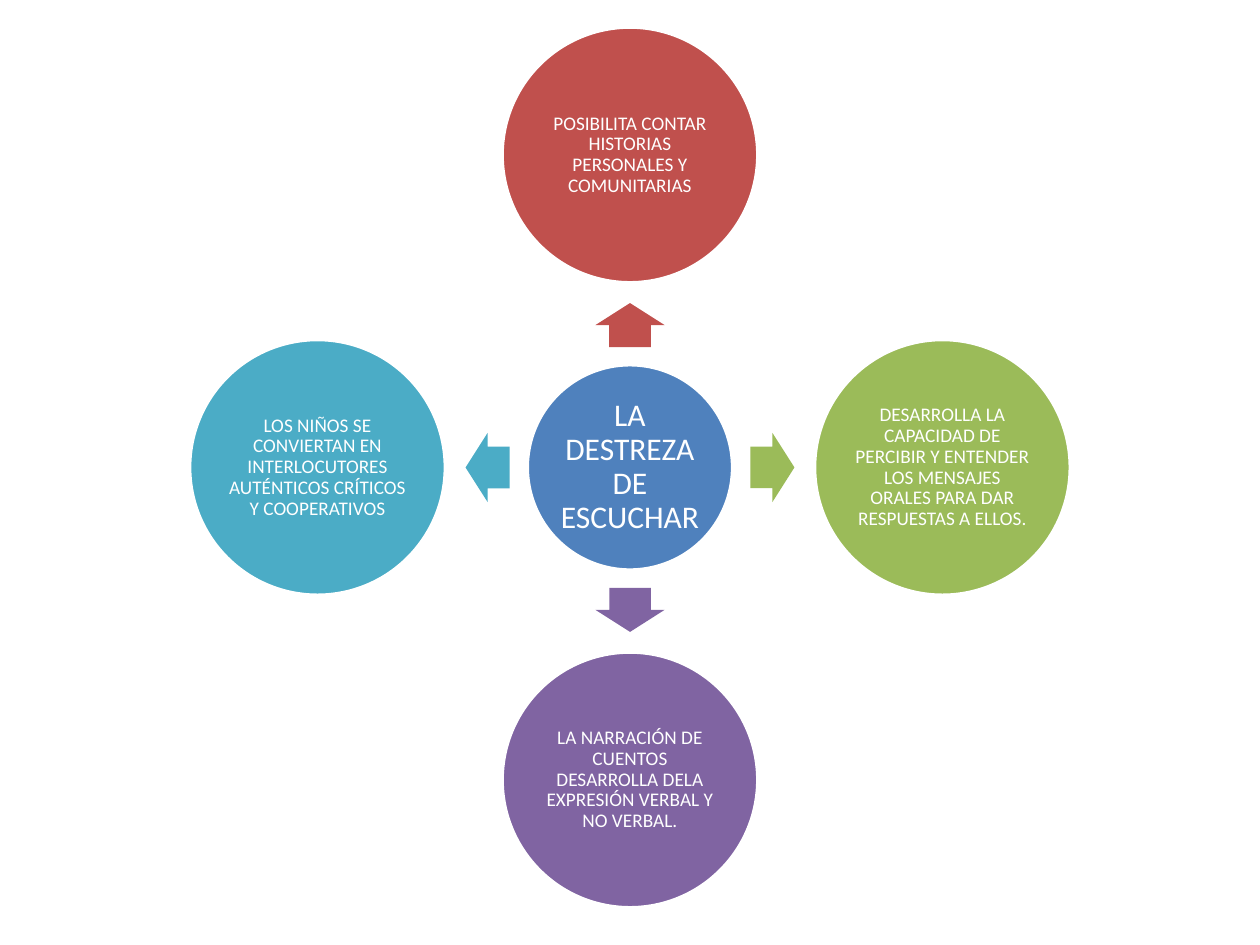
from math import cos, radians, sin

from pptx import Presentation
from pptx.dml.color import RGBColor
from pptx.enum.shapes import MSO_SHAPE
from pptx.enum.text import MSO_ANCHOR, PP_ALIGN
from pptx.util import Inches, Pt

OVAL = MSO_SHAPE.OVAL
RIGHT_ARROW = MSO_SHAPE.RIGHT_ARROW
MIDDLE = MSO_ANCHOR.MIDDLE
CENTER = PP_ALIGN.CENTER

WHITE = RGBColor(0xFF, 0xFF, 0xFF)
BLUE = RGBColor(0x4F, 0x81, 0xBD)
RED = RGBColor(0xC0, 0x50, 0x4D)
GREEN = RGBColor(0x9B, 0xBB, 0x59)
PURPLE = RGBColor(0x80, 0x64, 0xA2)
TEAL = RGBColor(0x4B, 0xAC, 0xC6)

HUB_X, HUB_Y = 5, 3.71
HUB_SIZE = 1.63
BENEFIT_SIZE = 2.03
BENEFIT_DISTANCE = 2.48
ARROW_LENGTH, ARROW_HEIGHT = 0.35, 0.55
ARROW_DISTANCE = 1.13
TEXT_INSET = 0.01

SKILL = "LA DESTREZA DE ESCUCHAR"
BENEFITS = [
    (270, RED, "POSIBILITA CONTAR HISTORIAS PERSONALES Y COMUNITARIAS"),
    (0, GREEN, "DESARROLLA LA CAPACIDAD DE PERCIBIR Y ENTENDER LOS MENSAJES "
               "ORALES PARA DAR RESPUESTAS A ELLOS."),
    (90, PURPLE, "LA NARRACIÓN DE CUENTOS DESARROLLA DELA EXPRESIÓN VERBAL Y "
                 "NO VERBAL."),
    (180, TEAL, "LOS NIÑOS SE CONVIERTAN EN INTERLOCUTORES AUTÉNTICOS CRÍTICOS "
                "Y COOPERATIVOS"),
]


def around_hub(angle, distance):
    turn = radians(angle)
    return HUB_X + distance * cos(turn), HUB_Y + distance * sin(turn)


def add_centred(slide, kind, centre, width, height, color):
    x, y = centre
    shape = slide.shapes.add_shape(
        kind, Inches(x - width / 2), Inches(y - height / 2),
        Inches(width), Inches(height))
    shape.shadow.inherit = False
    shape.fill.solid()
    shape.fill.fore_color.rgb = color
    return shape


def add_circle(slide, centre, diameter, color, text, font_size):
    circle = add_centred(slide, OVAL, centre, diameter, diameter, color)
    circle.line.color.rgb = WHITE
    circle.line.width = Pt(2)
    frame = circle.text_frame
    frame.word_wrap = True
    frame.vertical_anchor = MIDDLE
    frame.margin_left = frame.margin_right = Inches(TEXT_INSET)
    frame.margin_top = frame.margin_bottom = Inches(TEXT_INSET)
    frame.text = text
    paragraph = frame.paragraphs[0]
    paragraph.alignment = CENTER
    paragraph.line_spacing = 0.9
    paragraph.font.name = "Calibri"
    paragraph.font.size = Pt(font_size)
    paragraph.font.color.rgb = WHITE


def add_arrow(slide, angle, color):
    arrow = add_centred(slide, RIGHT_ARROW, around_hub(angle, ARROW_DISTANCE),
                        ARROW_LENGTH, ARROW_HEIGHT, color)
    arrow.adjustments[0] = 0.6
    arrow.adjustments[1] = 0.5
    arrow.rotation = angle
    arrow.line.fill.background()


def main():
    presentation = Presentation()
    presentation.slide_width = Inches(10)
    presentation.slide_height = Inches(7.5)
    slide = presentation.slides.add_slide(presentation.slide_layouts[6])

    add_circle(slide, (HUB_X, HUB_Y), HUB_SIZE, BLUE, SKILL, 18)
    for angle, color, benefit in BENEFITS:
        add_arrow(slide, angle, color)
        add_circle(slide, around_hub(angle, BENEFIT_DISTANCE), BENEFIT_SIZE,
                   color, benefit, 11)

    presentation.save("out.pptx")


if __name__ == "__main__":
    main()
